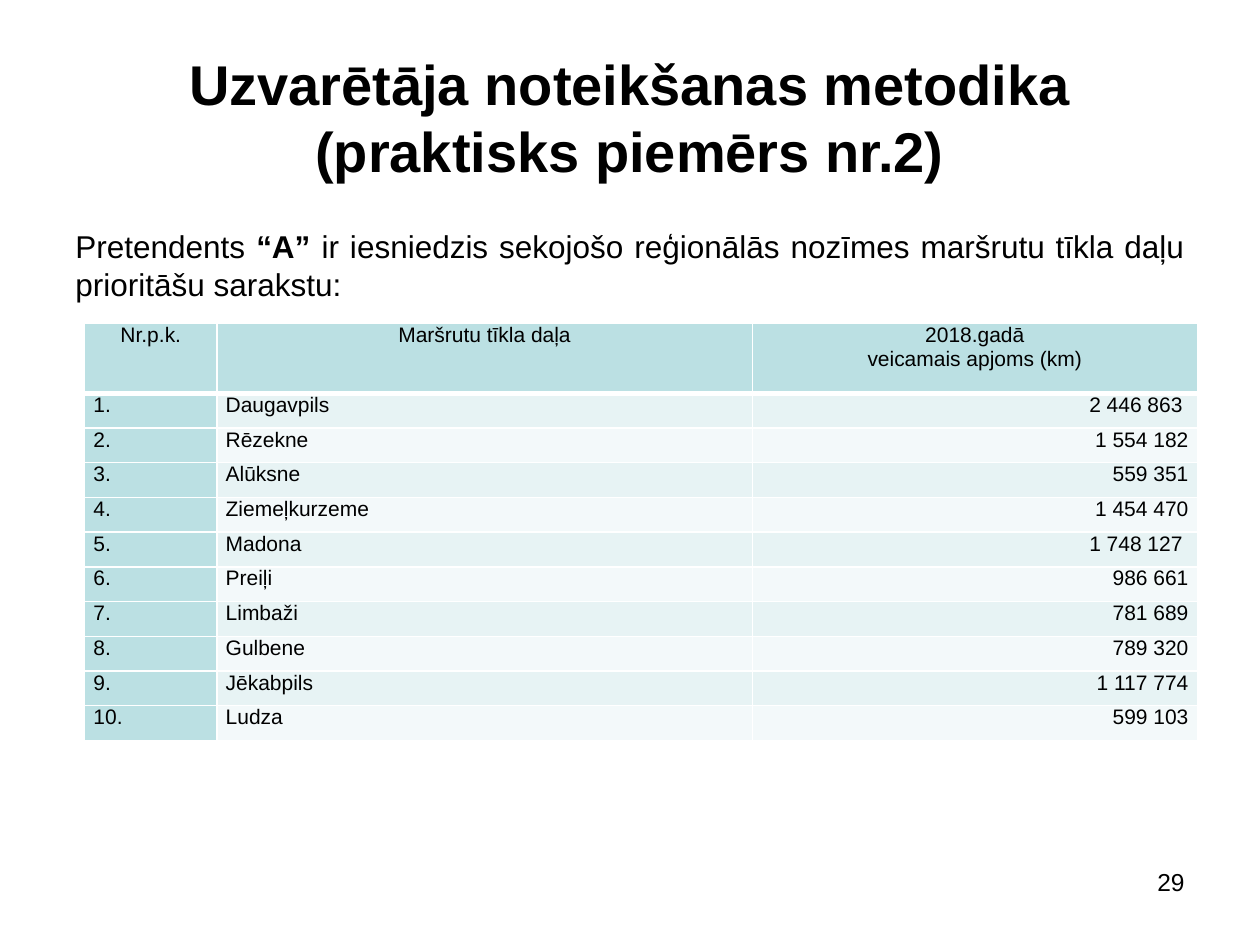
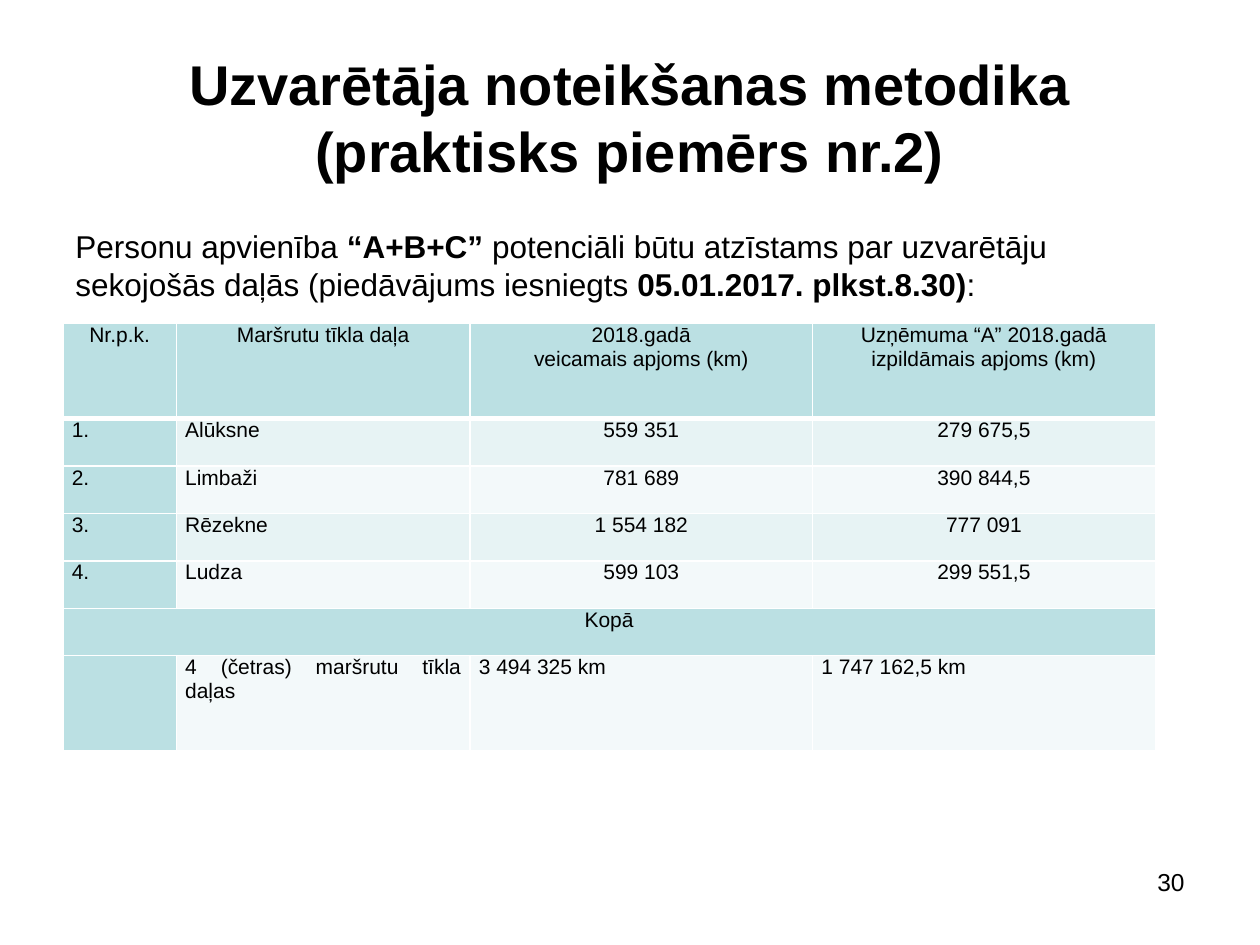
"""Build two slides on the method for choosing a winner, each with a route table."""
from lxml import etree
from pptx import Presentation
from pptx.dml.color import RGBColor
from pptx.enum.text import MSO_ANCHOR, MSO_AUTO_SIZE, PP_ALIGN
from pptx.oxml.ns import qn
from pptx.util import Pt

COLORS = {"text": "000000", "head": "BBE0E3", "odd": "E7F3F4", "even": "F3F9FA", "line": "FFFFFF"}
FONT = "Arial"
TITLE_LINES = ["Uzvarētāja noteikšanas metodika", "(praktisks piemērs nr.2)"]
LEFT, CENTER, RIGHT, JUSTIFY = PP_ALIGN.LEFT, PP_ALIGN.CENTER, PP_ALIGN.RIGHT, PP_ALIGN.JUSTIFY

SLIDES = [
    {
        "number": "29",
        "intro_align": JUSTIFY,
        "intro": [
            ("Pretendents ", False),
            ("“A” ", True),
            ("ir iesniedzis sekojošo reģionālās nozīmes maršrutu tīkla daļu prioritāšu sarakstu:", False),
        ],
        "table_left": 48.4,
        "columns": [75.6, 306, 254.2],
        "unit": 19.86,
        "tall_rows": [0],
        "aligns": [JUSTIFY, JUSTIFY, RIGHT],
        "rows": [
            ["Nr.p.k.", "Maršrutu tīkla daļa", "2018.gadā\nveicamais apjoms (km)"],
            ["1.", "Daugavpils", "2 446 863 "],
            ["2.", "Rēzekne", "1 554 182"],
            ["3.", "Alūksne", "559 351"],
            ["4.", "Ziemeļkurzeme", "1 454 470"],
            ["5.", "Madona", "1 748 127 "],
            ["6.", "Preiļi", "986 661"],
            ["7.", "Limbaži", "781 689"],
            ["8.", "Gulbene", "789 320"],
            ["9.", "Jēkabpils", "1 117 774"],
            ["10.", "Ludza", "599 103"],
        ],
    },
    {
        "number": "30",
        "intro_align": LEFT,
        "intro": [
            ("Personu apvienība ", False),
            ("“A+B+C” ", True),
            ("potenciāli būtu atzīstams par uzvarētāju sekojošās daļās (piedāvājums iesniegts ", False),
            ("05.01.2017. plkst.8.30)", True),
            (":", False),
        ],
        "table_left": 36,
        "columns": [64.8, 167.8, 195.8, 195.8],
        "unit": 27.12,
        "tall_rows": [0, 6],
        "aligns": [JUSTIFY, JUSTIFY, CENTER, CENTER],
        "rows": [
            ["Nr.p.k.", "Maršrutu tīkla daļa", "2018.gadā\nveicamais apjoms (km)",
             "Uzņēmuma “A” 2018.gadā izpildāmais apjoms (km)"],
            ["1.", "Alūksne", "559 351", "279 675,5"],
            ["2.", "Limbaži", "781 689", "390 844,5"],
            ["3.", "Rēzekne", "1 554 182", "777 091"],
            ["4.", "Ludza", "599 103", "299 551,5"],
            ["Kopā", "", "", ""],
            ["", "4 (četras) maršrutu tīkla daļas", "3 494 325 km", "1 747 162,5 km"],
        ],
    },
]


def add_run(paragraph, content, size, bold=False):
    run = paragraph.add_run()
    run.text = content
    run.font.name = FONT
    run.font.size = Pt(size)
    run.font.bold = bold
    run.font.color.rgb = RGBColor.from_string(COLORS["text"])


def add_borders(cell, bottom_width):
    properties = cell._tc.get_or_add_tcPr()
    for side, width in (("lnL", 1), ("lnR", 1), ("lnT", 1), ("lnB", bottom_width)):
        line = etree.SubElement(properties, qn(f"a:{side}"), w=str(Pt(width)))
        fill = etree.SubElement(line, qn("a:solidFill"))
        etree.SubElement(fill, qn("a:srgbClr"), val=COLORS["line"])


presentation = Presentation()
presentation.slide_width, presentation.slide_height = Pt(720), Pt(540)

for data in SLIDES:
    slide = presentation.slides.add_slide(presentation.slide_layouts[5])

    title = slide.shapes.title
    title.left, title.top, title.width, title.height = Pt(36), Pt(21.6), Pt(648), Pt(90)
    title.text_frame.auto_size = MSO_AUTO_SIZE.NONE
    title.text_frame.vertical_anchor = MSO_ANCHOR.MIDDLE
    paragraph = title.text_frame.paragraphs[0]
    paragraph.alignment = CENTER
    add_run(paragraph, TITLE_LINES[0], 32, True)
    paragraph.add_line_break()
    add_run(paragraph, TITLE_LINES[1], 32, True)

    intro = slide.shapes.add_textbox(Pt(36), Pt(126), Pt(648), Pt(356.4))
    intro.text_frame.word_wrap = True
    paragraph = intro.text_frame.paragraphs[0]
    paragraph.alignment = data["intro_align"]
    for content, bold in data["intro"]:
        add_run(paragraph, content, 18, bold)

    rows, columns, unit = data["rows"], data["columns"], data["unit"]
    heights = [unit * 2 if index in data["tall_rows"] else unit for index in range(len(rows))]
    table = slide.shapes.add_table(
        len(rows), len(columns), Pt(data["table_left"]), Pt(185), Pt(sum(columns)), Pt(sum(heights))
    ).table
    for column, width in zip(table.columns, columns):
        column.width = Pt(width)
    for row_index, row in enumerate(rows):
        table.rows[row_index].height = Pt(heights[row_index])
        is_header = row_index == 0
        is_total_band = row[0] == "Kopā"
        is_sum_row = row[0] == ""
        for column_index, content in enumerate(row):
            cell = table.cell(row_index, column_index)
            cell.margin_left = cell.margin_right = Pt(5.04)
            cell.margin_top = cell.margin_bottom = 0
            add_borders(cell, 3 if is_header else 1)
            shade = "odd" if row_index % 2 else "even"
            if is_header or is_total_band or column_index == 0:
                shade = "head"
            cell.fill.solid()
            cell.fill.fore_color.rgb = RGBColor.from_string(COLORS[shade])
            if not content:
                continue
            for line_index, line in enumerate(content.split("\n")):
                frame = cell.text_frame
                paragraph = frame.add_paragraph() if line_index else frame.paragraphs[0]
                paragraph.alignment = data["aligns"][column_index]
                if is_header or is_total_band:
                    paragraph.alignment = CENTER
                elif is_sum_row:
                    paragraph.alignment = JUSTIFY
                add_run(paragraph, line, 12)
        if is_total_band:
            table.cell(row_index, 0).merge(table.cell(row_index, len(columns) - 1))

    page_number = slide.shapes.add_textbox(Pt(516), Pt(492), Pt(168), Pt(37.5))
    page_number.text_frame.word_wrap = True
    paragraph = page_number.text_frame.paragraphs[0]
    paragraph.alignment = RIGHT
    add_run(paragraph, data["number"], 14)

presentation.save("out.pptx")
